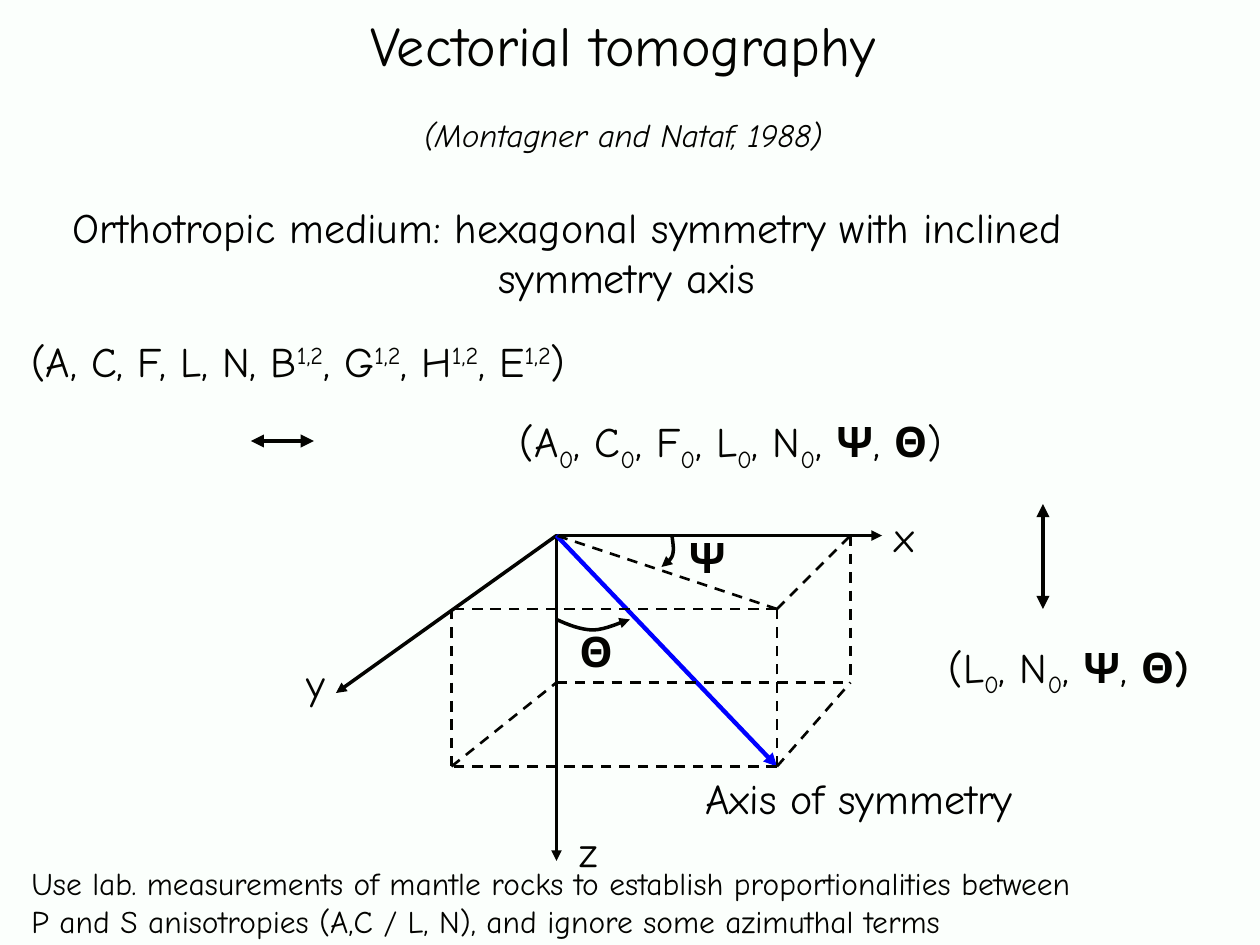
from lxml import etree
from pptx import Presentation
from pptx.dml.color import RGBColor
from pptx.enum.dml import MSO_LINE
from pptx.enum.shapes import MSO_CONNECTOR
from pptx.enum.text import MSO_AUTO_SIZE, PP_ALIGN
from pptx.oxml.ns import qn
from pptx.util import Pt

STRAIGHT = MSO_CONNECTOR.STRAIGHT
DASH = MSO_LINE.DASH
FIT_SHAPE = MSO_AUTO_SIZE.SHAPE_TO_FIT_TEXT
CENTER = PP_ALIGN.CENTER

FONT = "Comic Neue"
COLORS = {"background": "FBFFFC", "ink": "030300", "black": "000000", "axis": "0000FF"}

# Runs are split at "|"; a leading mark gives the style of the run
MARKS = {"_": "sub", "^": "super", "*": "bold", "~": "italic sub"}
BASELINES = {"sub": "-25000", "super": "30000", "italic sub": "-25000"}

# (left, top, width, height), size, colour, paragraphs
LABELS = [
    ((504, 288, 29, 36), 24, "ink", ["x"]),
    ((168, 372, 27, 36), 24, "ink", ["y"]),
    ((324, 468, 27, 36), 24, "ink", ["z"]),
    ((386.6, 300, 34, 36), 24, "ink", ["*Ψ"]),
    ((324, 354, 32.4, 36), 24, "ink", ["*Θ"]),
    ((396, 438, 216, 36.7), 24, "black", ["Axis of symmetry"]),
    ((10.8, 188, 386, 36.7), 24, "ink",
     ["(A, C, F, L, N, B|^1,2|, G|^1,2|, H|^1,2|, E|^1,2|)"]),
    ((290, 234, 282.2, 36.7), 24, "ink",
     ["(A|_0|, C|_0|, F|_0|, L|_0|, N|_0|, |*Ψ|, |*Θ|)"]),
    ((535, 363, 163.4, 36), 24, "ink", ["(L|_0|, N|_0|, |*Ψ|, |*Θ)"]),
    ((10.8, 490.3, 674.6, 51), 18, "ink",
     ["Use lab. measurements of mantle rocks to establish proportionalities between",
      "P and S anisotropies (A,C / L, N), and ignore some azimuthal terms"]),
]
TITLE = ["Vectorial tomography", "~(Montagner and Nataf, 1988)"]
MEDIUM = "Orthotropic medium: hexagonal symmetry with inclined symmetry axis"
MEDIUM_INDENT = 243

# Corners of the block in the x, y, z frame
ORIGIN = (318, 306)
X_TOP, X_LOW = (486, 306), (486, 390)
Y_TOP, Y_LOW = (258, 348), (258, 438)
XY_TOP, XY_LOW = (444, 348), (444, 438)
Z_LOW = (318, 390)

AXIS_ENDS = [(504, 306), (192, 396), (318, 492)]
EDGES = [
    (XY_LOW, XY_TOP), (XY_TOP, ORIGIN), (XY_TOP, X_TOP), (XY_TOP, Y_TOP),
    (Y_TOP, Y_LOW), (XY_LOW, Y_LOW), (Y_LOW, Z_LOW), (X_TOP, X_LOW),
    (Z_LOW, X_LOW), (XY_LOW, X_LOW),
]
EQUIVALENCES = [((143.3, 252), (179.3, 252)), ((596, 288), (596, 348))]

# Each angle arc is two cubic curves through seven points
ARCS = [
    [(318, 354), (324.5, 357), (332, 360), (339, 360), (346, 360), (356, 355), (360, 354)],
    [(384, 306), (384.5, 310), (385.5, 315), (384, 318), (382.5, 321), (380, 322.5), (378, 324)],
]
ARC_STEPS = 8


def rgb(name):
    return RGBColor.from_string(COLORS[name])


def add_runs(p, text):
    for part in text.split("|"):
        style = MARKS.get(part[0], "")
        r = p.add_run()
        r.text = part[1:] if style else part
        if style == "bold":
            r.font.bold = True
        if style in BASELINES:
            r.font._element.set("baseline", BASELINES[style])
        if style.startswith("italic"):
            r.font.italic = True


def add_text(slide, box, size, color, paragraphs, align=None, wrap=False):
    sp = slide.shapes.add_textbox(*map(Pt, box))
    tf = sp.text_frame
    tf.word_wrap = wrap
    tf.auto_size = FIT_SHAPE
    for i, text in enumerate(paragraphs):
        p = tf.add_paragraph() if i else tf.paragraphs[0]
        add_runs(p, text)
        p.alignment = align
        p.font.name = FONT
        p.font.size = Pt(size)
        p.font.color.rgb = rgb(color)
    return tf


def style_line(line, color, width, ends=()):
    """Ends are "headEnd" and "tailEnd", in that order."""
    line.color.rgb = rgb(color)
    line.width = Pt(width)
    for end in ends:
        etree.SubElement(line._get_or_add_ln(), qn("a:" + end), type="triangle")


def add_line(slide, start, finish, color, width, ends=()):
    sp = slide.shapes.add_connector(STRAIGHT, *map(Pt, start + finish))
    style_line(sp.line, color, width, ends)
    etree.SubElement(sp._element.spPr, qn("a:effectLst"))
    return sp


def cubic(points, t):
    weights = ((1 - t) ** 3, 3 * t * (1 - t) ** 2, 3 * t * t * (1 - t), t ** 3)
    return tuple(Pt(sum(w * pt[k] for w, pt in zip(weights, points))) for k in (0, 1))


def add_arc(slide, points):
    curve = [cubic(points[i:i + 4], n / ARC_STEPS)
             for i in (0, 3) for n in range(1, ARC_STEPS + 1)]
    builder = slide.shapes.build_freeform(*map(Pt, points[0]))
    builder.add_line_segments(curve, close=False)
    sp = builder.convert_to_shape()
    sp.shadow.inherit = False
    sp.fill.background()
    style_line(sp.line, "ink", 2, ["tailEnd"])


def main():
    prs = Presentation()
    prs.slide_width, prs.slide_height = Pt(720), Pt(540)
    slide = prs.slides.add_slide(prs.slide_layouts[6])
    slide.background.fill.solid()
    slide.background.fill.fore_color.rgb = rgb("background")

    add_text(slide, (187.2, 2.2, 337.7, 72), 32, "ink", TITLE, CENTER)
    tf = add_text(slide, (34.6, 111.6, 643, 64.8), 24, "black", [MEDIUM], wrap=True)
    pPr = tf.paragraphs[0]._p.get_or_add_pPr()
    pPr.set("marL", str(Pt(MEDIUM_INDENT)))
    pPr.set("indent", str(-Pt(MEDIUM_INDENT)))

    for end in AXIS_ENDS:
        add_line(slide, ORIGIN, end, "ink", 2, ["tailEnd"])
    add_line(slide, ORIGIN, XY_LOW, "axis", 2.5, ["tailEnd"])
    for start, finish in EDGES:
        add_line(slide, start, finish, "ink", 1.5).line.dash_style = DASH
    for points in ARCS:
        add_arc(slide, points)
    for start, finish in EQUIVALENCES:
        add_line(slide, start, finish, "ink", 2.5, ["headEnd", "tailEnd"])
    for label in LABELS:
        add_text(slide, *label)

    prs.save("out.pptx")


if __name__ == "__main__":
    main()
